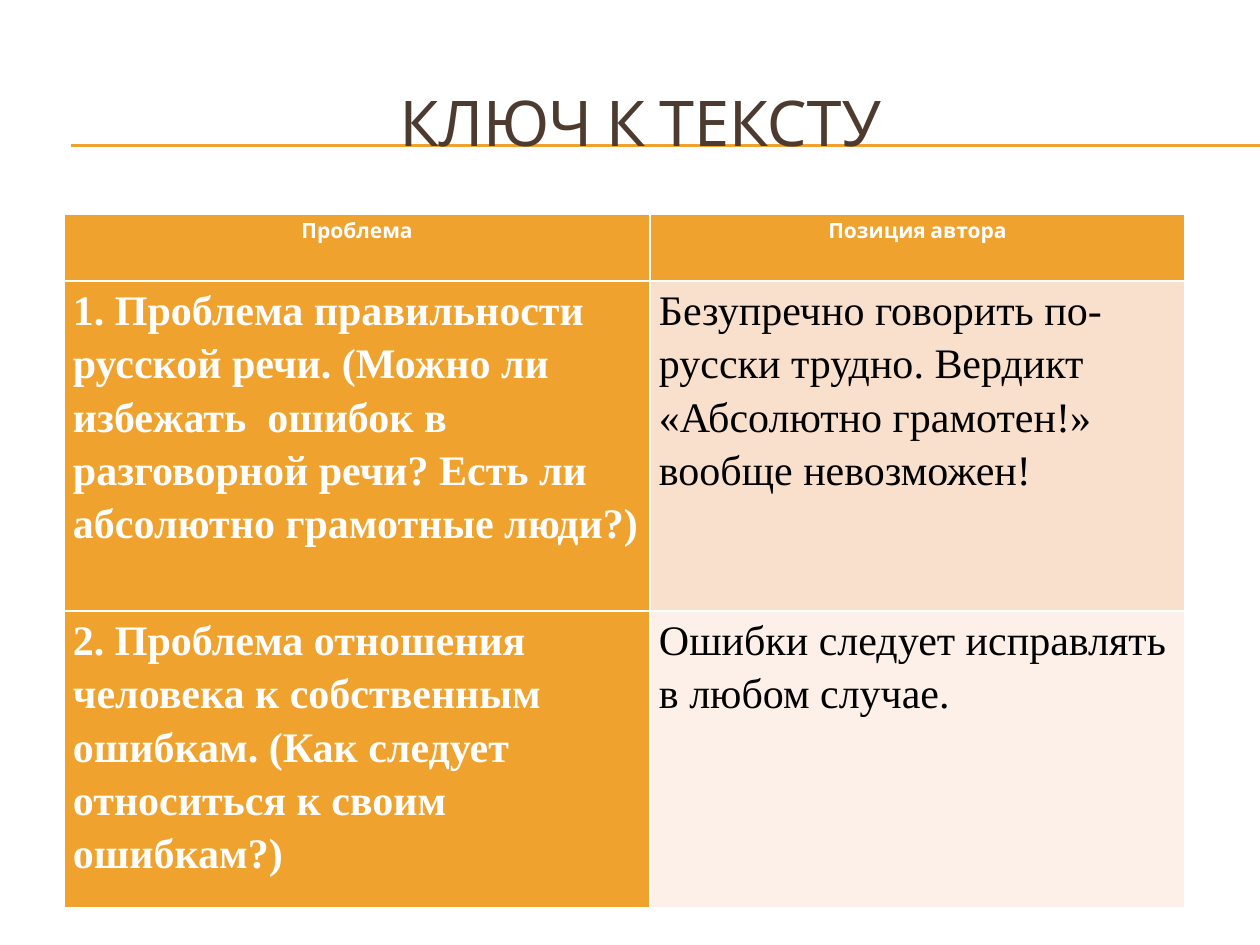
from lxml.etree import SubElement
from pptx import Presentation
from pptx.dml.color import RGBColor
from pptx.enum.shapes import MSO_CONNECTOR as Connector
from pptx.enum.text import MSO_ANCHOR as Anchor, MSO_AUTO_SIZE as AutoSize, PP_ALIGN as Align
from pptx.oxml.ns import qn
from pptx.util import Pt

EMU_PER_PX = 914400 / 126
TITLE_ONLY = 5
COLORS = {
    "accent": "F0A22E",
    "title": "4E3B30",
    "white": "FFFFFF",
    "black": "000000",
    "peach": "F9E0CD",
    "cream": "FCF0E8",
}
COLUMN_WIDTHS = (586, 535)
ROW_HEIGHTS = (67, 330, 297)
ANSWER_FILLS = ("accent", "peach", "cream")
ROWS = (
    ("Проблема", "Позиция автора"),
    (
        "1. Проблема правильности русской речи. (Можно ли избежать  ошибок в "
        "разговорной речи? Есть ли абсолютно грамотные люди?)",
        "Безупречно говорить по-русски трудно. Вердикт «Абсолютно грамотен!» "
        "вообще невозможен!",
    ),
    (
        "2. Проблема отношения человека к собственным ошибкам. (Как следует "
        "относиться к своим ошибкам?)",
        "Ошибки следует исправлять в любом случае.",
    ),
)
TITLE_FONT = {"name": "Cabin", "size": Pt(36), "bold": False}
HEADER_FONT = {"name": "Cabin", "size": Pt(12), "bold": True}
PROBLEM_FONT = {"name": "Times New Roman", "size": Pt(24), "bold": True}
ANSWER_FONT = {**PROBLEM_FONT, "bold": False}


def px(length):
    """Turn pixels into EMU."""
    return round(length * EMU_PER_PX)


def rgb(name):
    """Look up a named colour."""
    return RGBColor.from_string(COLORS[name])


def set_values(target, values):
    """Set attributes from a dict of format values."""
    for name, value in values.items():
        setattr(target, name, value)


def write_text(frame, text, font, color, paragraph_format):
    """Fill a text frame with one formatted paragraph."""
    paragraph = frame.paragraphs[0]
    set_values(paragraph, paragraph_format)
    run = paragraph.add_run()
    run.text = text
    set_values(run.font, font)
    run.font.color.rgb = rgb(color)


def add_rule(slide, y):
    """Draw a thin horizontal rule behind the title."""
    rule = slide.shapes.add_connector(Connector.STRAIGHT, px(71), px(y), px(1260), px(y))
    rule.line.color.rgb = rgb("accent")
    rule.line.width = Pt(0.75)
    SubElement(rule.element.spPr, qn("a:effectLst"))
    slide.shapes.element.insert(2, rule.element)


def add_title(slide, text):
    """Place and format the title placeholder."""
    title = slide.shapes.title
    set_values(title, {"left": px(42), "top": px(63), "width": px(1197), "height": px(116)})
    frame = title.text_frame
    set_values(frame, {
        "word_wrap": True, "auto_size": AutoSize.NONE, "vertical_anchor": Anchor.MIDDLE,
    })
    write_text(frame, text, TITLE_FONT, "title", {"alignment": Align.CENTER})


def format_cell(cell, text, row, column):
    """Style a cell by its place as header, problem or answer."""
    is_answer = row > 0 and column > 0
    set_values(cell, {
        "margin_left": px(9), "margin_right": px(9), "margin_top": 0, "margin_bottom": 0,
    })
    cell.fill.solid()
    cell.fill.fore_color.rgb = rgb(ANSWER_FILLS[row] if is_answer else "accent")
    font = HEADER_FONT if row == 0 else ANSWER_FONT if is_answer else PROBLEM_FONT
    alignment = Align.LEFT if row else Align.CENTER
    write_text(cell.text_frame, text, font, "black" if is_answer else "white",
               {"alignment": alignment, "line_spacing": 1.15})


def add_problem_table(slide):
    """Add the table of problems and author positions."""
    table = slide.shapes.add_table(
        len(ROWS), len(COLUMN_WIDTHS), px(64), px(214),
        px(sum(COLUMN_WIDTHS)), px(sum(ROW_HEIGHTS)),
    ).table
    table.first_col = True
    for column, width in zip(table.columns, COLUMN_WIDTHS):
        column.width = px(width)
    for row, height in zip(table.rows, ROW_HEIGHTS):
        row.height = px(height)
    for row, texts in enumerate(ROWS):
        for column, text in enumerate(texts):
            format_cell(table.cell(row, column), text, row, column)


def main():
    """Build and save the slide."""
    presentation = Presentation()
    set_values(presentation, {"slide_width": px(1260), "slide_height": px(945)})
    slide = presentation.slides.add_slide(presentation.slide_layouts[TITLE_ONLY])
    for y in (145, 146):
        add_rule(slide, y)
    add_title(slide, "КЛЮЧ К ТЕКСТУ")
    add_problem_table(slide)
    presentation.save("out.pptx")


if __name__ == "__main__":
    main()
